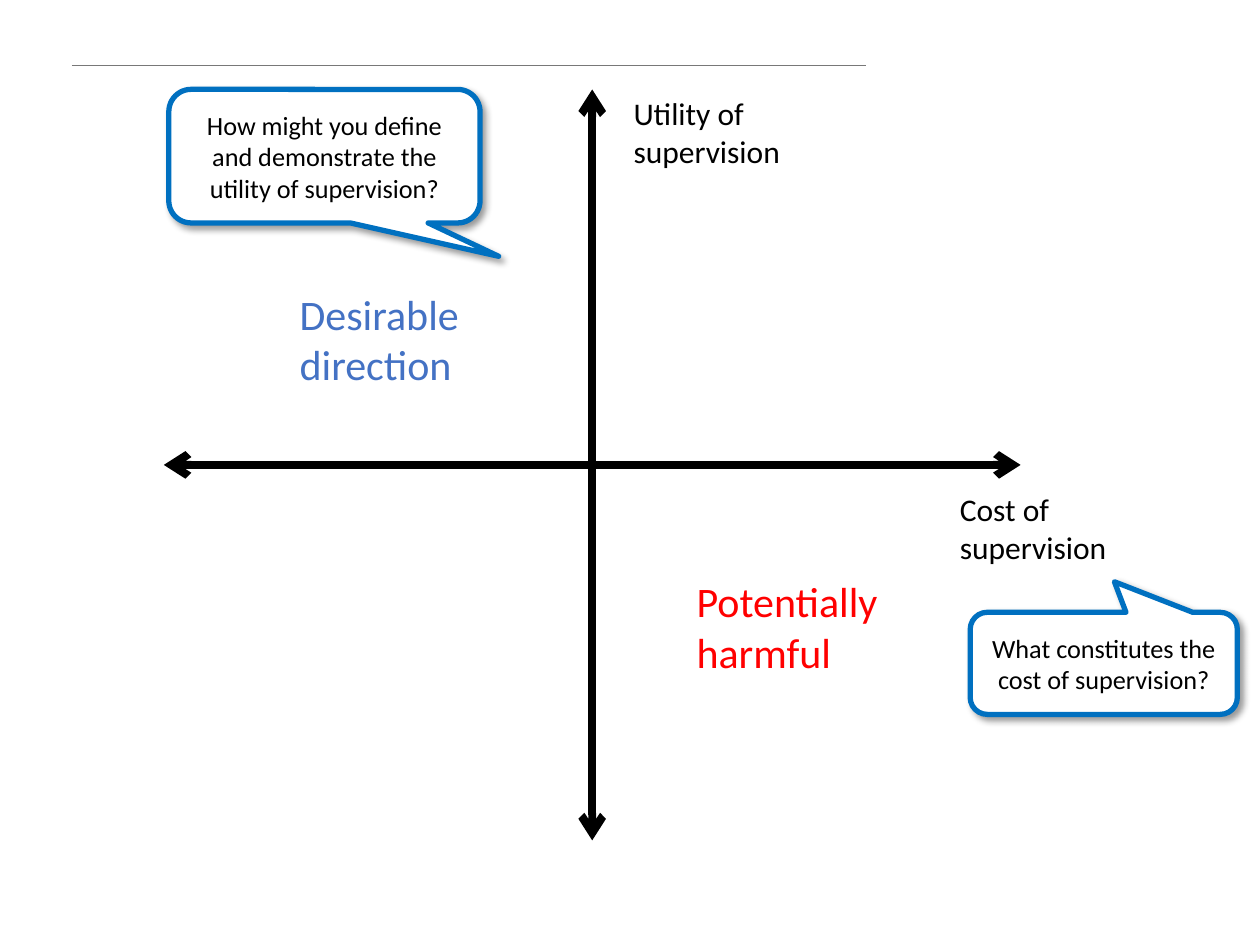
from dataclasses import dataclass

from lxml import etree
from pptx import Presentation
from pptx.dml.color import RGBColor
from pptx.enum.shapes import MSO_CONNECTOR, MSO_SHAPE
from pptx.enum.text import MSO_ANCHOR, MSO_AUTO_SIZE, PP_ALIGN
from pptx.oxml.ns import qn
from pptx.util import Inches, Pt

STRAIGHT = MSO_CONNECTOR.STRAIGHT
CALLOUT = MSO_SHAPE.ROUNDED_RECTANGULAR_CALLOUT
MIDDLE = MSO_ANCHOR.MIDDLE
GROW = MSO_AUTO_SIZE.SHAPE_TO_FIT_TEXT
CENTER = PP_ALIGN.CENTER


@dataclass(frozen=True)
class Theme:
    font: str = "Calibri"
    ink: str = "000000"
    paper: str = "FFFFFF"
    rule: str = "787878"
    outline: str = "0070C0"
    desirable: str = "4472C4"
    harmful: str = "FF0000"
    axis_size: int = 18
    quadrant_size: int = 24
    question_size: int = 15
    rule_width: float = 0.75
    axis_width: float = 4.5
    outline_width: float = 3


class SlideBuilder:
    def __init__(self, slide, theme):
        self.shapes = slide.shapes
        self.theme = theme

    def line(self, start, end, color, width, arrows=False):
        line = self.shapes.add_connector(STRAIGHT, *map(Inches, start + end))
        line.line.color.rgb = RGBColor.from_string(color)
        line.line.width = Pt(width)
        properties = line._element.spPr
        if arrows:
            stroke = properties.find(qn("a:ln"))
            for end_tag in ("a:headEnd", "a:tailEnd"):
                etree.SubElement(stroke, qn(end_tag), type="arrow")
        etree.SubElement(properties, qn("a:effectLst"))

    def set_text(self, shape, text, size, color, frame_format):
        frame = shape.text_frame
        for name, value in frame_format.items():
            setattr(frame, name, value)
        paragraph = frame.paragraphs[0]
        run = paragraph.add_run()
        run.text = text
        font_format = {"name": self.theme.font, "size": Pt(size)}
        for name, value in font_format.items():
            setattr(run.font, name, value)
        run.font.color.rgb = RGBColor.from_string(color)
        return paragraph

    def label(self, text, box, size, color):
        label = self.shapes.add_textbox(*map(Inches, box))
        self.set_text(label, text, size, color,
                      {"word_wrap": True, "auto_size": GROW})

    def callout(self, text, box, pointer):
        theme = self.theme
        callout = self.shapes.add_shape(CALLOUT, *map(Inches, box))
        for index, value in enumerate(pointer):
            callout.adjustments[index] = value
        callout.fill.solid()
        callout.fill.fore_color.rgb = RGBColor.from_string(theme.paper)
        callout.line.color.rgb = RGBColor.from_string(theme.outline)
        callout.line.width = Pt(theme.outline_width)
        self.cast_shadow(callout)
        paragraph = self.set_text(
            callout, text, theme.question_size, theme.ink,
            {"word_wrap": True, "vertical_anchor": MIDDLE})
        paragraph.alignment = CENTER

    def cast_shadow(self, shape):
        shape.shadow.inherit = False
        effects = shape._element.spPr.find(qn("a:effectLst"))
        shadow = etree.SubElement(
            effects, qn("a:outerShdw"), blurRad=str(Pt(4)), dist=str(Pt(3)),
            dir=str(45 * 60000), algn="tl", rotWithShape="0")
        color = etree.SubElement(shadow, qn("a:srgbClr"), val=self.theme.ink)
        etree.SubElement(color, qn("a:alpha"), val="40000")


def main():
    theme = Theme()
    deck = Presentation()
    deck.slide_width, deck.slide_height = Inches(10), Inches(7.5)
    builder = SlideBuilder(deck.slides.add_slide(deck.slide_layouts[6]), theme)

    builder.line((0.57, 0.52), (6.87, 0.52), theme.rule, theme.rule_width)

    center_x, center_y = 4.7, 3.69
    half_width, half_height = 3.4, 2.98
    axes = [
        ((center_x, center_y - half_height), (center_x, center_y + half_height)),
        ((center_x + half_width, center_y), (center_x - half_width, center_y)),
    ]
    for start, end in axes:
        builder.line(start, end, theme.ink, theme.axis_width, arrows=True)

    axis_labels = [
        ("Cost of supervision", 7.52, 3.84),
        ("Utility of supervision", 4.93, 0.7),
    ]
    for text, left, top in axis_labels:
        builder.label(text, (left, top, 1.5, 0.71), theme.axis_size, theme.ink)

    quadrant_labels = [
        ("Potentially harmful", 5.43, 4.52, theme.harmful),
        ("Desirable direction", 2.28, 2.24, theme.desirable),
    ]
    for text, left, top, color in quadrant_labels:
        builder.label(text, (left, top, 1.94, 0.91), theme.quadrant_size, color)

    builder.callout(
        "How might you define and demonstrate the utility of supervision?",
        (1.34, 0.71, 2.47, 1.06), (0.56, 0.75))
    builder.callout(
        "What constitutes the cost of supervision?",
        (7.7, 4.86, 2.12, 0.81), (0.04, -0.8))

    deck.save("out.pptx")


if __name__ == "__main__":
    main()
